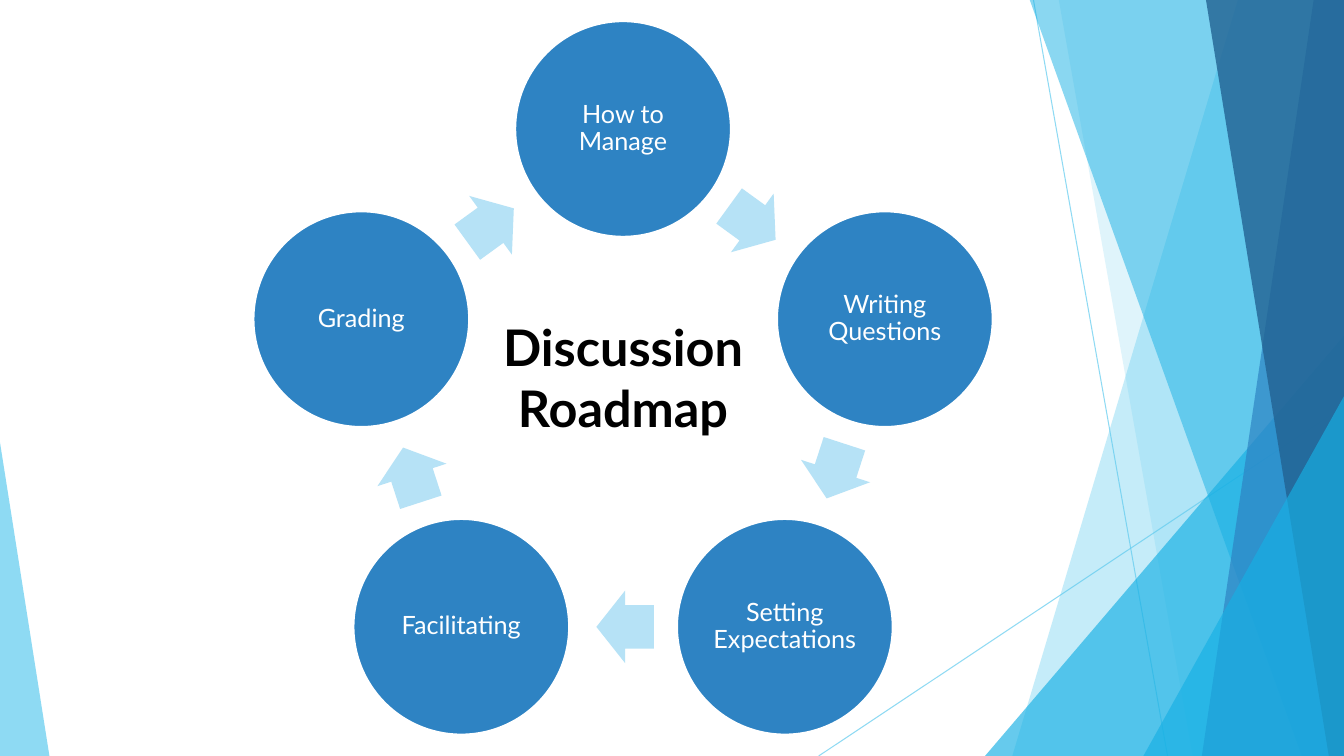
import math
import pptx
import pptx.util
import pptx.dml.color
import pptx.enum.shapes
import pptx.enum.text
import pptx.oxml
import pptx.oxml.ns

Inches = pptx.util.Inches
Pt = pptx.util.Pt
KIND = pptx.enum.shapes.MSO_SHAPE
qn = pptx.oxml.ns.qn

SKY, CYAN, BLUE, NAVY = "5FCBEF", "17B0E4", "2E83C3", "226292"
PALE, WHITE, BLACK = "B6E2F6", "FFFFFF", "000000"
WIDE, HIGH, EDGE = 13.33, 7.5, -0.01

STEPS = ["How to Manage", "Writing Questions", "Setting Expectations",
         "Facilitating", "Grading"]
HUB = (6.18, 4.01)
RING = 2.73
DISC = 2.14
ARROW = (0.57, 0.72)
LAG = 0.02

RAYS = [((10.25, 0), (11.58, HIGH)), ((WIDE, 4.03), (8.12, HIGH))]


def rgb(code):
    return pptx.dml.color.RGBColor.from_string(code)


def fade(shape, alpha):
    for node in shape._element.spPr.iter(qn("a:srgbClr")):
        pptx.oxml.ns
        child = node.makeelement(qn("a:alpha"), {"val": str(alpha * 1000)})
        node.append(child)


def paint(shape, color, alpha=100):
    shape.shadow.inherit = False
    shape.fill.solid()
    shape.fill.fore_color.rgb = rgb(color)
    shape.line.fill.background()
    if alpha < 100:
        fade(shape, alpha)


def ray(slide, start, end):
    line = slide.shapes.add_connector(
        pptx.enum.shapes.MSO_CONNECTOR.STRAIGHT,
        *(Inches(v) for v in start + end))
    line.line.color.rgb = rgb(SKY)
    line.line.width = Pt(0.75)
    fade(line, 70)
    props = line._element.spPr
    props.append(props.makeelement(qn("a:effectLst"), {}))


def facet(slide, top, foot, color, alpha):
    pen = slide.shapes.build_freeform(Inches(top), Inches(EDGE))
    corners = [(WIDE, EDGE), (WIDE, HIGH), (foot, HIGH)]
    pen.add_line_segments([(Inches(x), Inches(y)) for x, y in corners])
    paint(pen.convert_to_shape(), color, alpha)


def wedge(slide, left, top, width, tip, color, alpha):
    shape = slide.shapes.add_shape(
        KIND.ISOSCELES_TRIANGLE, Inches(left), Inches(top),
        Inches(width), Inches(HIGH - top))
    shape.adjustments[0] = tip
    paint(shape, color, alpha)


def write(frame, text, size, color, bold=False):
    frame.word_wrap = True
    para = frame.paragraphs[0]
    para.alignment = pptx.enum.text.PP_ALIGN.CENTER
    run = para.add_run()
    run.text = text
    run.font.name = "Lato"
    run.font.size = Pt(size)
    run.font.bold = bold
    run.font.color.rgb = rgb(color)
    return para


def place(slide, kind, x, y, width, height):
    return slide.shapes.add_shape(
        kind, Inches(x - width / 2), Inches(y - height / 2),
        Inches(width), Inches(height))


def spot(angle, reach):
    turn = math.radians(angle)
    return HUB[0] + reach * math.sin(turn), HUB[1] - reach * math.cos(turn)


def disc(slide, text, angle):
    shape = place(slide, KIND.OVAL, *spot(angle, RING), DISC, DISC)
    paint(shape, BLUE)
    shape.line.color.rgb = rgb(WHITE)
    shape.line.width = Pt(1.5)
    frame = shape.text_frame
    frame.margin_left = frame.margin_right = Inches(0.03)
    frame.margin_top = frame.margin_bottom = Inches(0.03)
    frame.vertical_anchor = pptx.enum.text.MSO_ANCHOR.MIDDLE
    write(frame, text, 18, WHITE).line_spacing = 0.9


def arrow(slide, angle):
    x, y = spot(angle, RING * math.cos(math.pi / len(STEPS)))
    turn = math.radians(angle)
    shape = place(slide, KIND.RIGHT_ARROW, x - LAG * math.cos(turn),
                  y - LAG * math.sin(turn), *ARROW)
    shape.adjustments[0] = 0.6
    shape.adjustments[1] = 0.5
    shape.rotation = angle
    paint(shape, PALE)


def decor(slide):
    for start, end in RAYS:
        ray(slide, start, end)
    facet(slide, 12.28, 10.04, SKY, 36)
    facet(slide, 10.5, 11.83, SKY, 20)
    wedge(slide, 9.77, 3.33, 3.56, 1, CYAN, 66)
    facet(slide, 10.21, 12.91, CYAN, 50)
    facet(slide, 13.03, 11.92, BLUE, 70)
    facet(slide, 11.96, 13.18, NAVY, 80)
    wedge(slide, 11.34, 3.93, 1.99, 1, CYAN, 66)
    wedge(slide, 0, 4.39, 0.49, 0, SKY, 70)


def cycle(slide):
    step = 360 / len(STEPS)
    for i, text in enumerate(STEPS):
        disc(slide, text, i * step)
        arrow(slide, (i + 0.5) * step)


def title(slide):
    box = slide.shapes.add_textbox(
        Inches(3.96), Inches(3.09), Inches(4.44), Inches(1.31))
    write(box.text_frame, "Discussion Roadmap", 36, BLACK, True)


def main():
    deck = pptx.Presentation()
    deck.slide_width = Inches(WIDE)
    deck.slide_height = Inches(HIGH)
    slide = deck.slides.add_slide(deck.slide_layouts[6])
    decor(slide)
    cycle(slide)
    title(slide)
    deck.save("out.pptx")


if __name__ == "__main__":
    main()
